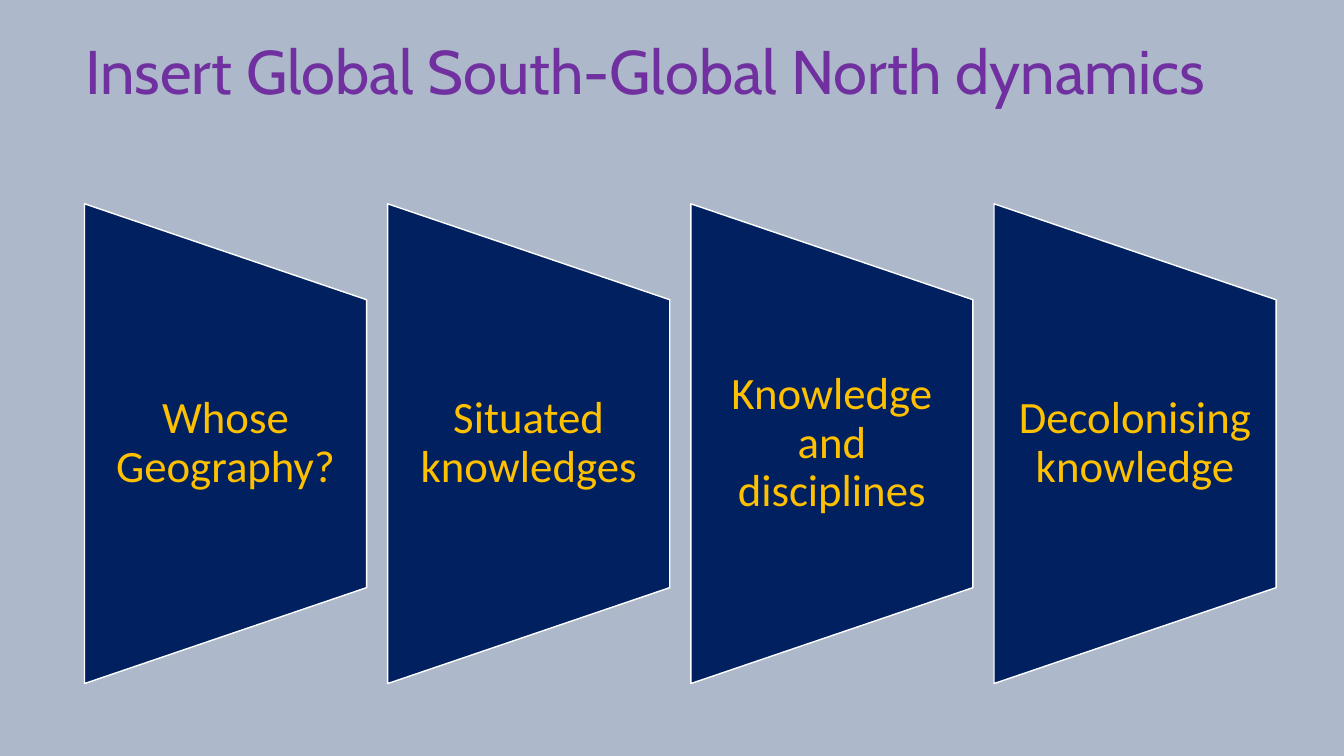
from dataclasses import dataclass

from pptx import Presentation
from pptx.dml.color import RGBColor
from pptx.enum.shapes import MSO_SHAPE as Preset
from pptx.enum.text import MSO_ANCHOR as Anchor, PP_ALIGN as Align
from pptx.slide import Slide
from pptx.util import Cm, Pt


@dataclass(frozen=True)
class Theme:
    background: RGBColor = RGBColor(0xAD, 0xB9, 0xCA)
    panel: RGBColor = RGBColor(0x00, 0x20, 0x60)
    outline: RGBColor = RGBColor(0xFF, 0xFF, 0xFF)
    title: RGBColor = RGBColor(0x70, 0x30, 0xA0)
    label: RGBColor = RGBColor(0xFF, 0xC0, 0x00)
    title_font: str = "Cabin"
    label_font: str = "Calibri"
    title_size: float = 44
    label_size: float = 32


@dataclass(frozen=True)
class Box:
    """A rectangle in centimetres."""
    left: float
    top: float
    width: float
    height: float


@dataclass(frozen=True)
class Panel:
    label: str
    column: int


THEME = Theme()
TITLE_BOX = Box(1.9, 0.05, 30.45, 3.68)

# Panel row, in centimetres
FIRST_LEFT = 2.13
PITCH = 7.64
PANEL_WIDTH = 7.11
PANEL_HEIGHT = 12.09
CENTRE_Y = 11.18
LABEL_HEIGHT = 7.26

LABELS = (
    "Whose Geography?",
    "Situated knowledges",
    "Knowledge and disciplines",
    "Decolonising knowledge",
)
PANELS = [Panel(label, column) for column, label in enumerate(LABELS)]


def add_text(slide: Slide, text: str, box: Box, *, font: str, size: float,
             color: RGBColor, align: Align = Align.LEFT,
             side_inset: float = 0.25, end_inset: float = 0.13) -> None:
    shape = slide.shapes.add_textbox(
        Cm(box.left), Cm(box.top), Cm(box.width), Cm(box.height))
    frame = shape.text_frame
    frame.word_wrap = True
    frame.vertical_anchor = Anchor.MIDDLE
    frame.margin_left = frame.margin_right = Cm(side_inset)
    frame.margin_top = frame.margin_bottom = Cm(end_inset)
    paragraph = frame.paragraphs[0]
    paragraph.alignment = align
    paragraph.line_spacing = 0.9
    run = paragraph.add_run()
    run.text = text
    run.font.name = font
    run.font.size = Pt(size)
    run.font.color.rgb = color


def add_panel(slide: Slide, panel: Panel) -> None:
    left = FIRST_LEFT + panel.column * PITCH
    centre_x = left + PANEL_WIDTH / 2

    # The trapezoid lies on its side, so its frame is turned about its centre
    shape = slide.shapes.add_shape(
        Preset.FLOWCHART_MANUAL_OPERATION,
        Cm(centre_x - PANEL_HEIGHT / 2), Cm(CENTRE_Y - PANEL_WIDTH / 2),
        Cm(PANEL_HEIGHT), Cm(PANEL_WIDTH))
    shape.rotation = 270
    shape.shadow.inherit = False
    shape.fill.solid()
    shape.fill.fore_color.rgb = THEME.panel
    shape.line.color.rgb = THEME.outline
    shape.line.width = Pt(1)

    # Upright label
    label_box = Box(left, CENTRE_Y - LABEL_HEIGHT / 2, PANEL_WIDTH, LABEL_HEIGHT)
    add_text(slide, panel.label, label_box, font=THEME.label_font,
             size=THEME.label_size, color=THEME.label, align=Align.CENTER,
             side_inset=0.56, end_inset=0)


def main() -> None:
    presentation = Presentation()
    presentation.slide_width = Cm(33.87)
    presentation.slide_height = Cm(19.05)
    slide = presentation.slides.add_slide(presentation.slide_layouts[6])

    # Background
    background = slide.background.fill
    background.solid()
    background.fore_color.rgb = THEME.background

    # Title
    add_text(slide, "Insert Global South-Global North dynamics", TITLE_BOX,
             font=THEME.title_font, size=THEME.title_size, color=THEME.title)

    # Row of panels
    for panel in PANELS:
        add_panel(slide, panel)

    presentation.save("out.pptx")


if __name__ == "__main__":
    main()
